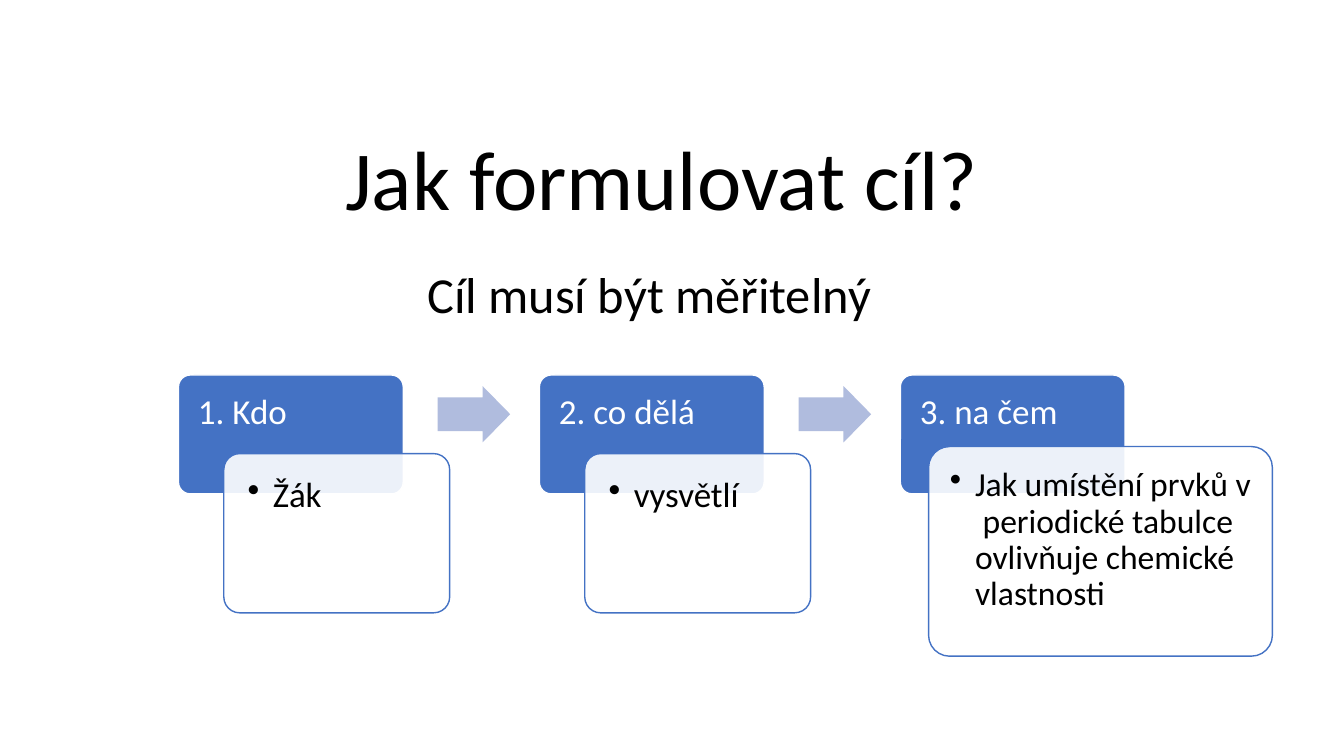
import pptx
import pptx.util
import pptx.dml.color
import pptx.enum.shapes
import pptx.enum.text
import pptx.oxml
import pptx.oxml.ns
from lxml import etree

Inches = pptx.util.Inches
Pt = pptx.util.Pt
RGBColor = pptx.dml.color.RGBColor
Shapes = pptx.enum.shapes.MSO_SHAPE
Align = pptx.enum.text.PP_ALIGN
Anchor = pptx.enum.text.MSO_ANCHOR
qn = pptx.oxml.ns.qn

BLACK = RGBColor(0x00, 0x00, 0x00)
WHITE = RGBColor(0xFF, 0xFF, 0xFF)
BLUE = RGBColor(0x44, 0x72, 0xC4)
PALE_BLUE = RGBColor(0xB0, 0xBC, 0xDE)

STEP_PITCH = 3.58
STEPS = [
    ("1. Kdo", "Žák", 25, (0.45, 0.78, 2.24, 1.58), 0.19),
    ("2. co dělá", "vysvětlí", 25, (0.45, 0.78, 2.24, 1.58), 0.19),
    ("3. na čem",
     "Jak umístění prvků v  periodické tabulce ovlivňuje chemické vlastnosti",
     24, (0.28, 0.71, 3.41, 2.08), 0.15),
]


def write_text(shape, text, size, color=BLACK, align=Align.LEFT,
               anchor=Anchor.TOP, insets=(0.1, 0.05, 0.1, 0.05), bullet=False):
    frame = shape.text_frame
    frame.word_wrap = True
    frame.auto_size = pptx.enum.text.MSO_AUTO_SIZE.NONE
    frame.vertical_anchor = anchor
    (frame.margin_left, frame.margin_top,
     frame.margin_right, frame.margin_bottom) = map(Inches, insets)
    para = frame.paragraphs[0]
    para.alignment = align
    para.line_spacing = 0.9
    span = para.add_run()
    span.text = text
    span.font.name = "Calibri"
    span.font.size = Pt(size)
    span.font.color.rgb = color
    if bullet:
        properties = para._p.get_or_add_pPr()
        properties.set("marL", str(Inches(0.25)))
        properties.set("indent", str(Inches(-0.25)))
        etree.SubElement(properties, qn("a:buChar")).set("char", "•")


def place(shape, left, top, width, height):
    shape.left, shape.top = Inches(left), Inches(top)
    shape.width, shape.height = Inches(width), Inches(height)


def add_block(page, kind, left, top, width, height, fill, line=None,
              adjustments=(0.1,), opacity=None):
    shape = page.shapes.add_shape(
        kind, Inches(left), Inches(top), Inches(width), Inches(height))
    shape.shadow.inherit = False
    for index, value in enumerate(adjustments):
        shape.adjustments[index] = value
    shape.fill.solid()
    shape.fill.fore_color.rgb = fill
    if opacity is not None:
        color = shape._element.spPr.find(qn("a:solidFill")).find(qn("a:srgbClr"))
        etree.SubElement(color, qn("a:alpha")).set("val", str(opacity * 1000))
    if line is None:
        shape.line.fill.background()
    else:
        shape.line.color.rgb = line
        shape.line.width = Pt(1)
    return shape


def add_headings(page, left, top, width, height):
    title = page.shapes.title
    place(title, left + 0.12, top, width, height)
    write_text(title, "Jak formulovat cíl?", 60, align=Align.CENTER,
               anchor=Anchor.BOTTOM)
    subtitle = page.shapes.add_textbox(0, 0, 0, 0)
    place(subtitle, left, top + 1.5, width, height)
    write_text(subtitle, "Cíl musí být měřitelný", 36, align=Align.CENTER,
               anchor=Anchor.BOTTOM, insets=(0.1, 0.05, 0.1, 0.6))


def add_step(page, left, top, heading, detail, size, card_box, inset):
    header = add_block(page, Shapes.ROUNDED_RECTANGLE, left, top, 2.23, 1.18,
                       BLUE, WHITE)
    write_text(header, heading, 25, WHITE, insets=(0.16, 0.16, 0.16, 0.47))
    across, down, width, height = card_box
    card = add_block(page, Shapes.ROUNDED_RECTANGLE, left + across, top + down,
                     width, height, WHITE, BLUE, opacity=90)
    write_text(card, detail, size, insets=(inset,) * 4, bullet=True)


def add_process(page, left, top):
    for index, step in enumerate(STEPS):
        step_left = left + index * STEP_PITCH
        add_step(page, step_left, top, *step)
        if index < len(STEPS) - 1:
            add_block(page, Shapes.RIGHT_ARROW, step_left + 2.57, top + 0.11,
                      0.72, 0.56, PALE_BLUE, adjustments=(0.6, 0.49))


def main():
    deck = pptx.Presentation()
    deck.slide_width, deck.slide_height = Inches(13.33), Inches(7.5)
    page = deck.slides.add_slide(deck.slide_layouts[5])
    add_headings(page, 0.42, 1.01, 12.04, 1.31)
    add_process(page, 1.77, 3.72)
    deck.save("out.pptx")


if __name__ == "__main__":
    main()
